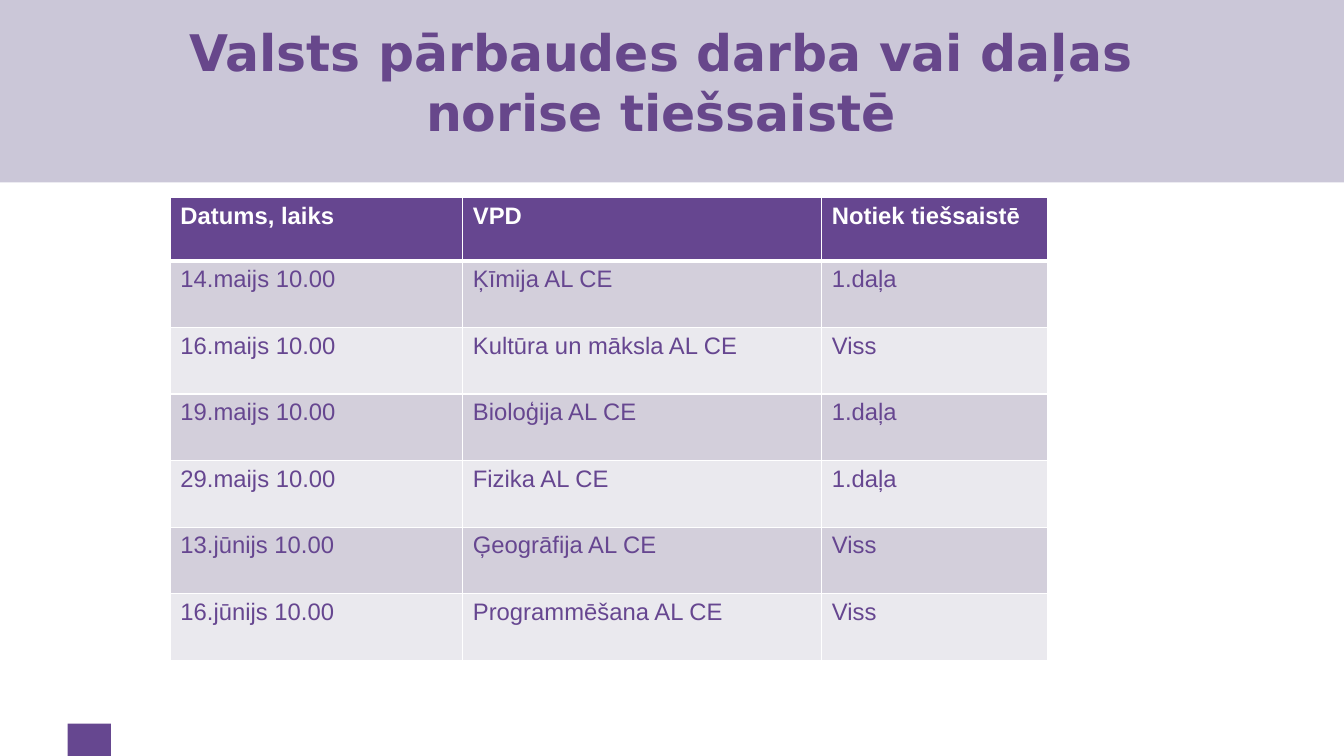
from lxml.etree import SubElement
from pptx import Presentation
from pptx.dml.color import RGBColor
from pptx.enum.shapes import MSO_SHAPE
from pptx.enum.text import MSO_ANCHOR, MSO_AUTO_SIZE, PP_ALIGN
from pptx.oxml.ns import qn
from pptx.util import Inches, Pt

BAND = RGBColor(0xCB, 0xC7, 0xD8)
MARKER = RGBColor(0x66, 0x47, 0x90)
TITLE = RGBColor(0x67, 0x47, 0x8B)
PURPLE = RGBColor(0x66, 0x46, 0x90)
ODD_ROW = RGBColor(0xD3, 0xCF, 0xDB)
EVEN_ROW = RGBColor(0xEA, 0xE9, 0xEE)
WHITE = RGBColor(0xFF, 0xFF, 0xFF)

SCHEDULE = [
    ("Datums, laiks", "VPD", "Notiek tiešsaistē"),
    ("14.maijs 10.00", "Ķīmija AL CE", "1.daļa"),
    ("16.maijs 10.00", "Kultūra un māksla AL CE", "Viss"),
    ("19.maijs 10.00", "Bioloģija AL CE", "1.daļa"),
    ("29.maijs 10.00", "Fizika AL CE", "1.daļa"),
    ("13.jūnijs 10.00", "Ģeogrāfija AL CE", "Viss"),
    ("16.jūnijs 10.00", "Programmēšana AL CE", "Viss"),
]
COLUMN_WIDTHS = (2.9, 3.56, 2.24)
HEADER_HEIGHT, ROW_HEIGHT = 0.63, 0.66


def add_run(paragraph, text, font_name, size, color, bold):
    run = paragraph.add_run()
    run.text = text
    run.font.name = font_name
    run.font.size = Pt(size)
    run.font.color.rgb = color
    run.font.bold = bold


def add_block(slide, left, top, width, height, color):
    block = slide.shapes.add_shape(
        MSO_SHAPE.RECTANGLE, Inches(left), Inches(top), Inches(width), Inches(height))
    block.shadow.inherit = False
    block.fill.solid()
    block.fill.fore_color.rgb = color
    block.line.fill.background()
    return block


def add_heading(slide, left, top, width, height):
    """Fill the box with a band and set the title over it."""
    band = add_block(slide, left, top, width, height, BAND)
    heading = slide.shapes.title
    heading.element.addprevious(band.element)
    heading.left, heading.top = Inches(left + 1.6), Inches(top + 0.28)
    heading.width, heading.height = Inches(10.01), Inches(1.25)
    frame = heading.text_frame
    frame.word_wrap = True
    frame.auto_size = MSO_AUTO_SIZE.NONE
    frame.vertical_anchor = MSO_ANCHOR.MIDDLE
    frame.margin_left, frame.margin_right = 0, Inches(0.1)
    frame.margin_top, frame.margin_bottom = Inches(0.05), Inches(0.25)
    paragraph = frame.paragraphs[0]
    paragraph.alignment = PP_ALIGN.CENTER
    add_run(paragraph, "Valsts pārbaudes darba vai daļas norise tiešsaistē",
            "DejaVu Sans", 36, TITLE, True)


def set_borders(cell, top, bottom):
    """Draw white borders; top and bottom are widths in points."""
    properties = cell._tc.get_or_add_tcPr()
    for side, width in (("L", 1), ("R", 1), ("T", top), ("B", bottom)):
        line = SubElement(properties, qn(f"a:ln{side}"), w=str(Pt(width)))
        fill = SubElement(line, qn("a:solidFill"))
        SubElement(fill, qn("a:srgbClr"), val=str(WHITE))


def fill_cell(cell, text, row):
    is_header = row == 0
    set_borders(cell, 3 if row == 1 else 1, 3 if is_header else 1)
    cell.fill.solid()
    cell.fill.fore_color.rgb = PURPLE if is_header else ODD_ROW if row % 2 else EVEN_ROW
    add_run(cell.text_frame.paragraphs[0], text, "Arial", 17,
            WHITE if is_header else PURPLE, is_header)


def add_schedule(slide, left, top):
    heights = [HEADER_HEIGHT] + [ROW_HEIGHT] * (len(SCHEDULE) - 1)
    table = slide.shapes.add_table(
        len(SCHEDULE), len(COLUMN_WIDTHS), Inches(left), Inches(top),
        Inches(sum(COLUMN_WIDTHS)), Inches(sum(heights))).table
    for column, width in zip(table.columns, COLUMN_WIDTHS):
        column.width = Inches(width)
    for row, (entries, height) in enumerate(zip(SCHEDULE, heights)):
        table.rows[row].height = Inches(height)
        for column, text in enumerate(entries):
            fill_cell(table.cell(row, column), text, row)


def main():
    presentation = Presentation()
    presentation.slide_width, presentation.slide_height = Inches(13.33), Inches(7.5)
    slide = presentation.slides.add_slide(presentation.slide_layouts[5])
    add_heading(slide, 0, 0, 13.33, 1.81)
    add_block(slide, 0.67, 7.18, 0.43, 0.32, MARKER)
    add_schedule(slide, 1.69, 1.96)
    presentation.save("out.pptx")


if __name__ == "__main__":
    main()
